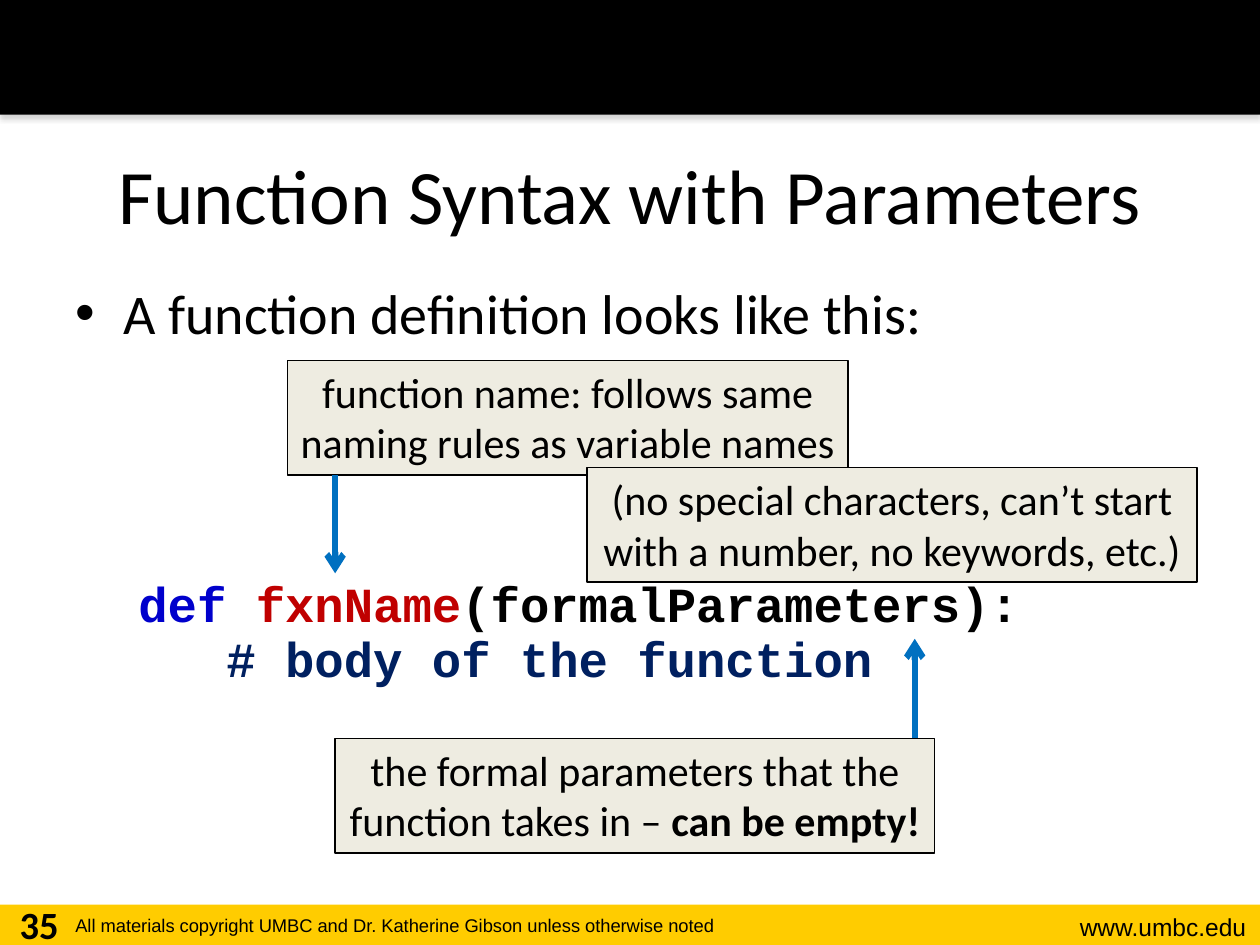
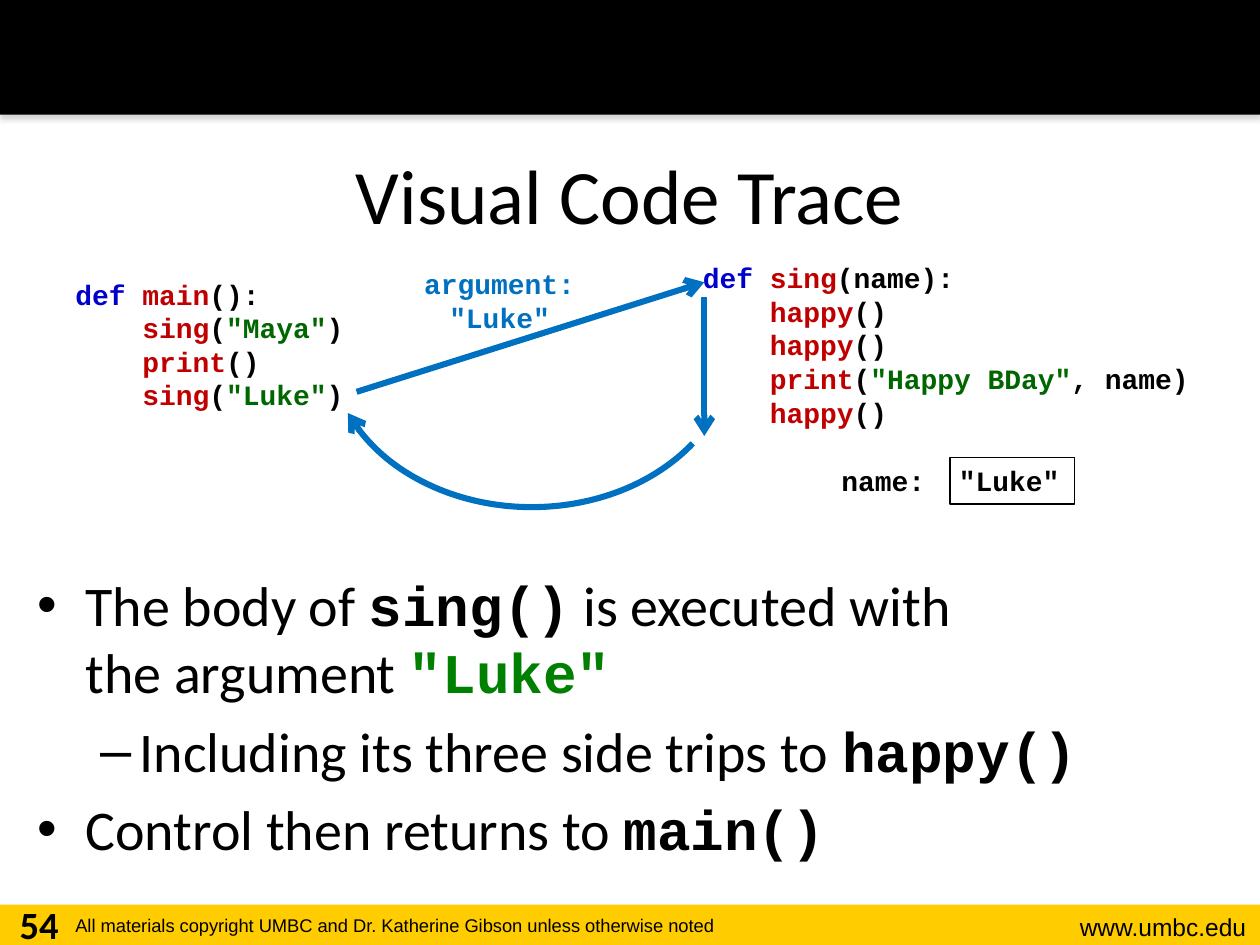
from pptx import Presentation
from pptx.dml.color import RGBColor as RGB
from pptx.enum.shapes import MSO_CONNECTOR as LINK, MSO_SHAPE as SHAPE
from pptx.enum.text import MSO_ANCHOR as ANCHOR, PP_ALIGN as ALIGN
from pptx.oxml import parse_xml
from pptx.oxml.ns import nsdecls, qn
from pptx.oxml.xmlchemy import OxmlElement as Tag
from pptx.util import Inches, Pt

BLACK = RGB(0, 0, 0)
GOLD = RGB(0xFF, 0xCC, 0x00)
CREAM = RGB(0xEE, 0xEC, 0xE1)
BLUE = RGB(0x00, 0x70, 0xC0)
NAVY = RGB(0x00, 0x20, 0x60)
WORD = RGB(0x00, 0x00, 0xCC)
RED = RGB(0xC0, 0x00, 0x00)
LEAF = RGB(0x00, 0x66, 0x00)
GREEN = RGB(0x00, 0x80, 0x00)

SANS, MONO, PLAIN = "Calibri", "Courier New", "Arial"
INDENTS = {"•": (0.38, -0.38), "–": (0.81, -0.31)}
SHADOW = (
    f'<a:effectLst {nsdecls("a")}>'
    '<a:outerShdw blurRad="40000" dist="23000" dir="5400000" rotWithShape="0">'
    '<a:srgbClr val="808080"><a:alpha val="35000"/></a:srgbClr>'
    "</a:outerShdw></a:effectLst>"
)


def write(frame, paras, size=16, font=SANS, color=BLACK, bold=False,
          align=ALIGN.LEFT, gap=0, pitch=1.0, marks="", anchor=ANCHOR.TOP):
    """Fill a frame with paragraphs of runs; a run is text or (text, format)."""
    frame.word_wrap = True
    frame.vertical_anchor = anchor
    for i, runs in enumerate([paras] if isinstance(paras, str) else paras):
        para = frame.paragraphs[0] if i == 0 else frame.add_paragraph()
        para.alignment = align
        if marks:
            bullet(para, marks[i])
        para.line_spacing = pitch
        if i:
            para.space_before = Pt(gap)
        for run in [runs] if isinstance(runs, str) else runs:
            words, look = (run, {}) if isinstance(run, str) else run
            for j, part in enumerate(words.split("\n")):
                if j:
                    para.add_line_break()
                piece = para.add_run()
                piece.text = part
                piece.font.size = Pt(size)
                piece.font.name = look.get("font", font)
                piece.font.bold = look.get("bold", bold)
                piece.font.color.rgb = look.get("color", color)


def bullet(para, mark):
    """Give a paragraph a bullet and its hanging indent."""
    left, hang = INDENTS[mark]
    props = para._p.get_or_add_pPr()
    props.set("marL", str(Inches(left)))
    props.set("indent", str(Inches(hang)))
    face, sign = Tag("a:buFont"), Tag("a:buChar")
    face.set("typeface", PLAIN)
    sign.set("char", mark)
    props.extend([face, sign])


def tint(color):
    """Return a function that makes a run of one colour."""
    return lambda words: (words, {"color": color})


def code(words, color=BLACK):
    """Return a bold run in the code font."""
    return words, {"font": MONO, "bold": True, "color": color}


def call(name, *args):
    """Return the runs of an indented call on its own line."""
    return ["    ", red(name), "(", *args, ")"]


key, red, quote, note = map(tint, (WORD, RED, LEAF, NAVY))


class Deck:
    """Holds the shared style and the slide being drawn."""

    def __init__(self):
        """Start an empty 10 by 7.5 inch deck."""
        self.prs = Presentation()
        self.prs.slide_width, self.prs.slide_height = Inches(10), Inches(7.5)

    def page(self, title, number):
        """Add a slide with bands, footer, title and number."""
        self.slide = self.prs.slides.add_slide(self.prs.slide_layouts[6])
        self.rect(0, 7.18, 10, 0.32, fill=GOLD)
        band = self.rect(0, 0, 10, 0.91, fill=BLACK, flat=False)
        band._element.spPr.append(parse_xml(SHADOW))
        self.text(8, 7.19, 1.99, 0.34, "www.umbc.edu", size=14, font=PLAIN,
                  align=ALIGN.RIGHT)
        self.text(0.5, 7.21, 6.56, 0.29,
                  "All materials copyright UMBC and Dr. Katherine Gibson "
                  "unless otherwise noted", size=10.5, font=PLAIN)
        self.text(0.5, 0.91, 9, 1.25, title, size=44, align=ALIGN.CENTER,
                  anchor=ANCHOR.MIDDLE)
        self.text(0, 7.1, 0.62, 0.4, str(number), size=22, bold=True,
                  align=ALIGN.CENTER)

    def text(self, x, y, w, h, paras, **look):
        """Add a text box."""
        box = self.slide.shapes.add_textbox(*map(Inches, (x, y, w, h)))
        write(box.text_frame, paras, **look)

    def code(self, x, y, w, h, paras, **look):
        """Add a text box of bold code."""
        self.text(x, y, w, h, paras, font=MONO, bold=True, **look)

    def shape(self, kind, x, y, w, h):
        """Add a preset shape without fill."""
        item = self.slide.shapes.add_shape(kind, *map(Inches, (x, y, w, h)))
        item.fill.background()
        return item

    def rect(self, x, y, w, h, fill=None, edge=None, flat=True):
        """Add a rectangle."""
        item = self.shape(SHAPE.RECTANGLE, x, y, w, h)
        if fill is not None:
            item.fill.solid()
            item.fill.fore_color.rgb = fill
        if edge is None:
            item.line.fill.background()
        else:
            item.line.color.rgb = edge
            item.line.width = Pt(0.75)
        if flat:
            item.shadow.inherit = False
        return item

    def label(self, x, y, w, paras):
        """Add a cream box that explains a piece of code."""
        item = self.rect(x, y, w, 0.91, fill=CREAM, edge=BLACK)
        write(item.text_frame, paras, size=24, align=ALIGN.CENTER)

    def stroke(self, item):
        """Give a line or arc the thick blue arrow style."""
        item.line.color.rgb = BLUE
        item.line.width = Pt(3.5)
        props = item._element.spPr
        head = Tag("a:tailEnd")
        head.set("type", "arrow")
        props.find(qn("a:ln")).append(head)
        props.append(Tag("a:effectLst"))

    def arrow(self, *ends):
        """Add a straight arrow."""
        self.stroke(self.slide.shapes.add_connector(
            LINK.STRAIGHT, *map(Inches, ends)))

    def arc(self, x, y, w, h, start, stop, turn):
        """Add a curved arrow between two angles in degrees."""
        item = self.shape(SHAPE.ARC, x, y, w, h)
        item.rotation = turn
        for i, angle in enumerate((start, stop)):
            item.adjustments[i] = angle * 0.6
        self.stroke(item)


def syntax(deck):
    """Draw the slide on function syntax."""
    deck.page("Function Syntax with Parameters", 35)
    deck.text(0.5, 2.16, 9, 0.65, "A function definition looks like this:",
              size=32, marks="•")
    deck.code(1, 4.54, 8.5, 1.05, [
        [key("def "), red("fxnName"), "(formalParameters):"],
        ["   ", note("# body of the function")],
    ], size=28, pitch=0.94)
    deck.label(2.28, 2.86, 4.45,
               "function name: follows same naming rules as variable names")
    deck.arrow(2.66, 3.77, 2.66, 4.55)
    deck.label(4.66, 3.71, 4.84, "(no special characters, can’t start "
               "with a number, no keywords, etc.)")
    deck.label(2.66, 5.86, 4.76, [[
        "the formal parameters that the function takes in – ",
        ("can be empty!", {"bold": True})]])
    deck.arrow(7.26, 5.86, 7.26, 5.07)


def trace(deck):
    """Draw the slide that traces the calls."""
    deck.page("Visual Code Trace", 54)
    deck.code(0.5, 2.15, 2.8, 1.18, [
        [key("def "), red("main"), "():"],
        call("sing", quote('"Maya"')),
        call("print"),
        call("sing", quote('"Luke"')),
    ])
    deck.code(5.48, 2.02, 4.44, 1.45, [
        [key("def "), red("sing"), "(name):"],
        call("happy"),
        call("happy"),
        call("print", quote('"Happy BDay"'), ", name"),
        call("happy"),
    ])
    deck.code(3.2, 2.07, 1.53, 0.64, 'argument: "Luke"', color=BLUE,
              align=ALIGN.CENTER)
    deck.arrow(2.83, 3.11, 5.59, 2.24)
    deck.code(6.58, 3.63, 0.96, 0.37, "name:")
    value = deck.rect(7.54, 3.63, 0.99, 0.37, edge=BLACK)
    value.text_frame.margin_left = Inches(0.07)
    write(value.text_frame, '"Luke"', font=MONO, bold=True)
    deck.text(0.2, 4.48, 8.95, 2.47, [
        ["The body of ", code("sing()"), " is executed with\nthe argument ",
         code('"Luke"', GREEN)],
        ["Including its three side trips to ", code("happy()")],
        ["Control then returns to ", code("main()")],
    ], size=32, gap=6.4, marks="•–•")
    deck.arrow(5.59, 2.36, 5.59, 3.46)
    deck.arc(2.94, 1.14, 2.56, 3.21, 121.19, 249.94, 270)


def main():
    """Build and save the deck."""
    deck = Deck()
    syntax(deck)
    trace(deck)
    deck.prs.save("out.pptx")


if __name__ == "__main__":
    main()
